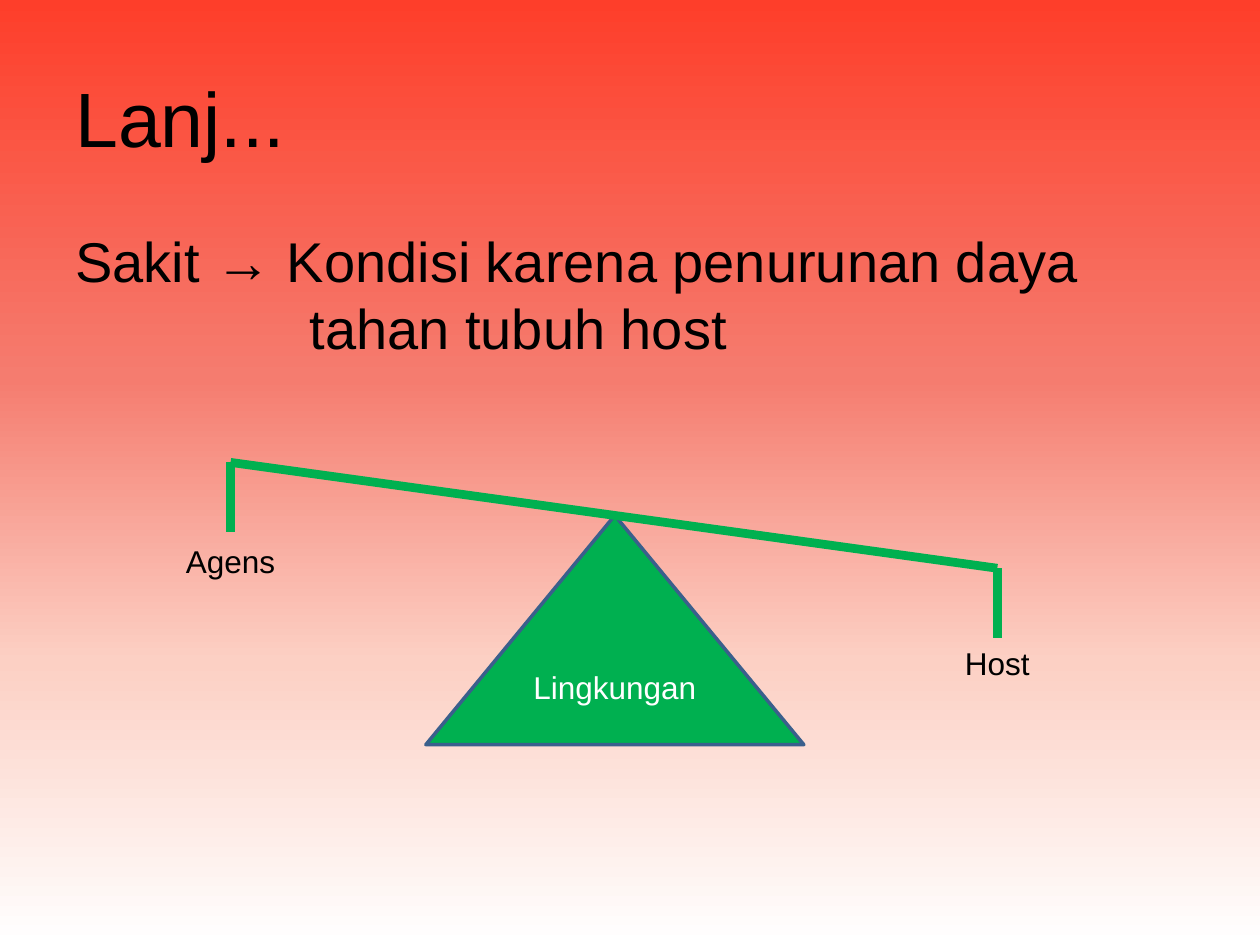
"""Build a slide with a seesaw of agent and host balanced on the environment."""
from lxml import etree
from pptx import Presentation
from pptx.dml.color import RGBColor
from pptx.enum.shapes import MSO_CONNECTOR, MSO_SHAPE
from pptx.enum.text import MSO_ANCHOR, PP_ALIGN
from pptx.oxml.ns import qn
from pptx.util import Inches, Pt

LEFT, CENTER = PP_ALIGN.LEFT, PP_ALIGN.CENTER
TOP, MIDDLE = MSO_ANCHOR.TOP, MSO_ANCHOR.MIDDLE
TRIANGLE, STRAIGHT = MSO_SHAPE.ISOSCELES_TRIANGLE, MSO_CONNECTOR.STRAIGHT
BLACK = RGBColor(0x00, 0x00, 0x00)
WHITE = RGBColor(0xFF, 0xFF, 0xFF)
GREEN = RGBColor(0x00, 0xB0, 0x50)
BLUE = RGBColor(0x3A, 0x5F, 0x8C)
BACKGROUND_STOPS = [
    (0, RGBColor(0xFE, 0x3E, 0x2A)),
    (40, RGBColor(0xF5, 0x7C, 0x6F)),
    (70, RGBColor(0xFC, 0xD0, 0xC4)),
    (100, WHITE),
]
COLUMNS, ROWS = 100, 75

deck = Presentation()
deck.slide_width, deck.slide_height = Inches(10), Inches(7.5)
page = deck.slides.add_slide(deck.slide_layouts[6])


def cells(*values):
    """Turn alternating column and row counts into slide lengths."""
    units = (deck.slide_width / COLUMNS, deck.slide_height / ROWS)
    return [round(value * units[index % 2]) for index, value in enumerate(values)]


def write(box, text, size=18, color=BLACK, align=CENTER, anchor=TOP):
    """Put one formatted paragraph in a shape and return it."""
    frame = box.text_frame
    frame.word_wrap = True
    frame.vertical_anchor = anchor
    para = frame.paragraphs[0]
    para.alignment = align
    span = para.add_run()
    span.text = text
    span.font.name = "Arial"
    span.font.size = Pt(size)
    span.font.color.rgb = color
    return para


background = page.background.fill
background.gradient()
background.gradient_angle = 270
stop_list = page.element.xpath(".//a:gsLst")[0]
for stop in list(stop_list):
    stop_list.remove(stop)
for percent, color in BACKGROUND_STOPS:
    stop = etree.SubElement(stop_list, qn("a:gs"), pos=str(percent * 1000))
    etree.SubElement(stop, qn("a:srgbClr"), val=str(color))

title = page.shapes.add_textbox(*cells(5, 3, 90, 12.5))
write(title, "Lanj...", size=44, align=LEFT, anchor=MIDDLE)

body = page.shapes.add_textbox(*cells(5, 17.5, 90, 13.3))
para = write(body, "Sakit → Kondisi karena penurunan daya tahan tubuh host", size=32, align=LEFT)
para.space_before = Pt(6.4)
hanging = Inches(1.86)
properties = para._p.get_or_add_pPr()
properties.set("marL", str(hanging))
properties.set("indent", str(-hanging))

seesaw = page.shapes.add_group_shape().shapes
pivot = seesaw.add_shape(TRIANGLE, *cells(33.8, 40.9, 30, 18.2))
pivot.shadow.inherit = False
pivot.fill.solid()
pivot.fill.fore_color.rgb = GREEN
pivot.line.color.rgb = BLUE
pivot.line.width = Pt(2)
write(pivot, "Lingkungan", color=WHITE, anchor=MIDDLE)

agent_end, host_end = (18.3, 36.7), (79.15, 45.1)
hanger = 5.5
bars = [(*agent_end, *host_end)]
bars += [(x, y, x, y + hanger) for x, y in (agent_end, host_end)]
for bar in bars:
    beam = seesaw.add_connector(STRAIGHT, *cells(*bar))
    beam.line.color.rgb = GREEN
    beam.line.width = Pt(5)
    etree.SubElement(beam._element.spPr, qn("a:effectLst"))

label_width, label_height = 21.7, 4
for text, middle, top in (("Agens", agent_end[0], 42.5), ("Host", host_end[0], 50.6)):
    label = seesaw.add_textbox(*cells(middle - label_width / 2, top, label_width, label_height))
    write(label, text)

deck.save("out.pptx")
